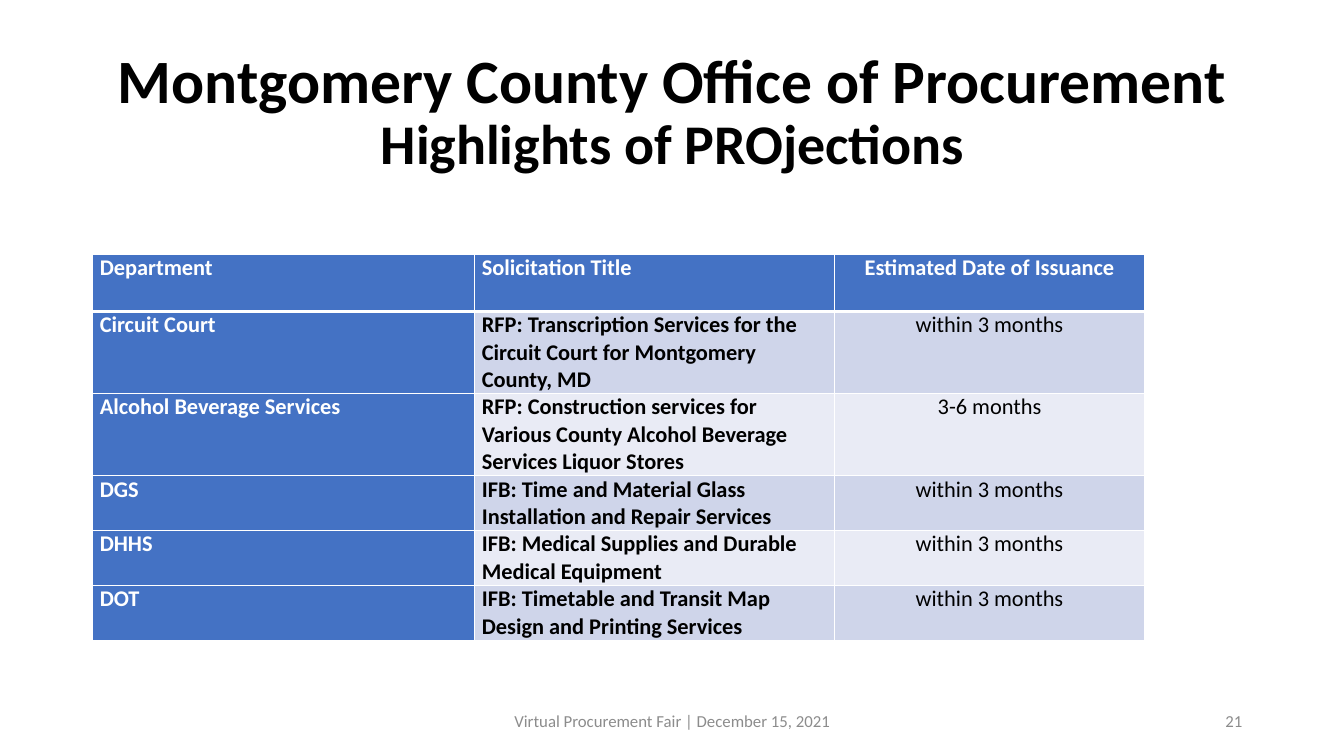
from pptx import Presentation
from pptx.dml.color import RGBColor
from pptx.enum.text import MSO_ANCHOR, PP_ALIGN
from pptx.oxml.ns import qn
from pptx.util import Inches, Pt
from lxml import etree

LEFT, CENTER, RIGHT = PP_ALIGN.LEFT, PP_ALIGN.CENTER, PP_ALIGN.RIGHT
MIDDLE = MSO_ANCHOR.MIDDLE

BLACK = RGBColor(0x00, 0x00, 0x00)
WHITE = RGBColor(0xFF, 0xFF, 0xFF)
GRAY = RGBColor(0x8C, 0x8C, 0x8C)
BLUE = RGBColor(0x44, 0x72, 0xC4)
BANDS = (RGBColor(0xCF, 0xD5, 0xEA), RGBColor(0xE9, 0xEB, 0xF5))

HEADINGS = ("Department", "Solicitation Title", "Estimated Date of Issuance")
SOLICITATIONS = (
    ("Circuit Court",
     "RFP: Transcription Services for the Circuit Court for Montgomery County, MD",
     "within 3 months"),
    ("Alcohol Beverage Services",
     "RFP: Construction services for Various County Alcohol Beverage Services Liquor Stores",
     "3-6 months"),
    ("DGS", "IFB: Time and Material Glass Installation and Repair Services",
     "within 3 months"),
    ("DHHS", "IFB: Medical Supplies and Durable Medical Equipment",
     "within 3 months"),
    ("DOT", "IFB: Timetable and Transit Map Design and Printing Services",
     "within 3 months"),
)
COLUMN_WIDTHS = (3.79, 3.57, 3.07)
ROW_HEIGHTS = (0.57, 0.81, 0.81, 0.54, 0.54, 0.54)


class ProjectionsSlide:
    font = "Calibri"

    def __init__(self, presentation):
        self.slide = presentation.slides.add_slide(presentation.slide_layouts[5])

    def style(self, paragraph, sizes, color, align, bold=False):
        """Format a paragraph, taking one size for each of its runs."""
        paragraph.alignment = align
        for run, size in zip(paragraph.runs, sizes):
            run.font.name = self.font
            run.font.size = Pt(size)
            run.font.bold = bold
            run.font.color.rgb = color

    def title(self, text, sizes, left, top, width, height):
        heading = self.slide.shapes.title
        heading.left, heading.top = Inches(left), Inches(top)
        heading.width, heading.height = Inches(width), Inches(height)
        frame = heading.text_frame
        frame.text = text
        frame.vertical_anchor = MIDDLE
        frame.paragraphs[0].line_spacing = 0.9
        self.style(frame.paragraphs[0], sizes, BLACK, CENTER, bold=True)

    def footer(self, text, left, width, align):
        box = self.slide.shapes.add_textbox(
            Inches(left), Inches(6.95), Inches(width), Inches(0.4))
        frame = box.text_frame
        frame.word_wrap = True
        frame.vertical_anchor = MIDDLE
        frame.text = text
        self.style(frame.paragraphs[0], [12], GRAY, align)

    def borders(self, cell, widths):
        """Draw white cell borders; widths maps each side to its points."""
        properties = cell._tc.get_or_add_tcPr()
        for side, points in widths.items():
            line = etree.SubElement(properties, qn(f"a:ln{side}"), w=str(Pt(points)))
            fill = etree.SubElement(line, qn("a:solidFill"))
            etree.SubElement(fill, qn("a:srgbClr"), val=str(WHITE))

    def cell(self, cell, text, fill, color, align, bold, top_line, bottom_line):
        cell.margin_left = cell.margin_right = Inches(0.07)
        cell.margin_top = cell.margin_bottom = 0
        self.borders(cell, {"L": 1, "R": 1, "T": top_line, "B": bottom_line})
        cell.fill.solid()
        cell.fill.fore_color.rgb = fill
        cell.text_frame.text = text
        self.style(cell.text_frame.paragraphs[0], [16], color, align, bold)

    def table(self, rows, left, top):
        table = self.slide.shapes.add_table(
            len(rows), len(COLUMN_WIDTHS), Inches(left), Inches(top),
            Inches(sum(COLUMN_WIDTHS)), Inches(sum(ROW_HEIGHTS))).table
        for column, width in zip(table.columns, COLUMN_WIDTHS):
            column.width = Inches(width)
        for row, height in zip(table.rows, ROW_HEIGHTS):
            row.height = Inches(height)
        last = len(COLUMN_WIDTHS) - 1
        for r, texts in enumerate(rows):
            for c, text in enumerate(texts):
                heading = r == 0 or c == 0
                self.cell(
                    table.cell(r, c), text,
                    fill=BLUE if heading else BANDS[(r - 1) % 2],
                    color=WHITE if heading else BLACK,
                    align=CENTER if c == last else LEFT,
                    bold=heading or c < last,
                    top_line=3 if r == 1 else 1,
                    bottom_line=3 if r == 0 else 1)


def main():
    presentation = Presentation()
    presentation.slide_width = Inches(13.33)
    presentation.slide_height = Inches(7.5)
    page = ProjectionsSlide(presentation)

    # Title
    page.title("Montgomery County Office of Procurement\vHighlights of PROjections",
               (44, 40), 0.92, 0.4, 11.5, 1.45)

    # Upcoming solicitations
    page.table((HEADINGS,) + SOLICITATIONS, 0.92, 2.52)

    # Footer and slide number
    page.footer("Virtual Procurement Fair | December 15, 2021", 4.42, 4.5, CENTER)
    page.footer("21", 9.42, 3, RIGHT)

    presentation.save("out.pptx")


if __name__ == "__main__":
    main()
